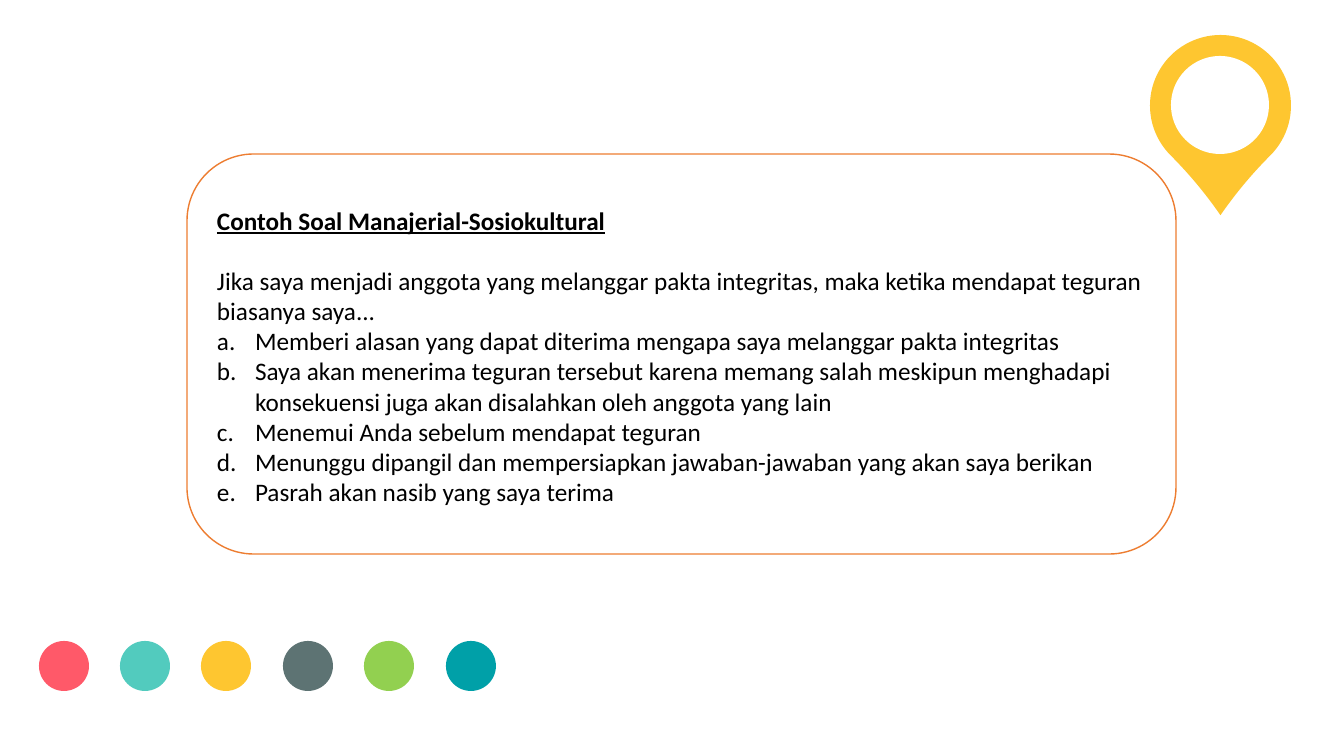
from lxml.etree import SubElement
from pptx import Presentation
from pptx.dml.color import RGBColor
from pptx.enum.shapes import MSO_SHAPE
from pptx.enum.text import MSO_ANCHOR, MSO_AUTO_SIZE, PP_ALIGN
from pptx.oxml.ns import qn
from pptx.util import Pt

PX = 914400 / 100.8
YELLOW = "FEC630"
DOTS = ["FF5969", "52CBBE", YELLOW, "5D7373", "92D050", "00A0A8"]
TITLE = "Contoh Soal Manajerial-Sosiokultural"
PROMPT = ("Jika saya menjadi anggota yang melanggar pakta integritas, "
          "maka ketika mendapat teguran biasanya saya...")
CHOICES = [
    "Memberi alasan yang dapat diterima mengapa saya melanggar pakta integritas",
    "Saya akan menerima teguran tersebut karena memang salah meskipun menghadapi "
    "konsekuensi juga akan disalahkan oleh anggota yang lain",
    "Menemui Anda sebelum mendapat teguran",
    "Menunggu dipangil dan mempersiapkan jawaban-jawaban yang akan saya berikan",
    "Pasrah akan nasib yang saya terima",
]


def px(n):
    return round(n * PX)


def color(code):
    return RGBColor.from_string(code)


def add_form(shapes, kind, x, y, w, h, fill, line=None):
    form = shapes.add_shape(kind, px(x), px(y), px(w), px(h))
    form.shadow.inherit = False
    form.fill.solid()
    form.fill.fore_color.rgb = color(fill)
    if line:
        form.line.color.rgb = color(line)
        form.line.width = Pt(1)
    else:
        form.line.fill.background()
    return form


def place(holder, x, y, w, h):
    """Move a placeholder and strip its margins and autofit."""
    holder.left, holder.top, holder.width, holder.height = map(px, (x, y, w, h))
    frame = holder.text_frame
    frame.margin_left = frame.margin_right = 0
    frame.margin_top = frame.margin_bottom = 0
    frame.word_wrap = True
    frame.auto_size = MSO_AUTO_SIZE.NONE
    frame.vertical_anchor = MSO_ANCHOR.TOP
    return frame


def write(para, text, size=18, bold=False, underline=False, tint="000000"):
    para.alignment = PP_ALIGN.LEFT
    para.space_before = para.space_after = Pt(0)
    run = para.add_run()
    run.text = text
    font = run.font
    font.name, font.size = "Calibri", Pt(size)
    font.bold, font.underline = bold, underline
    font.color.rgb = color(tint)


def mark(para, letter=False):
    """Give a paragraph a letter with hanging indent, or no bullet."""
    props = para._p.get_or_add_pPr()
    hang = px(38) if letter else 0
    props.set("marL", str(hang))
    props.set("indent", str(-hang))
    if letter:
        SubElement(props, qn("a:buFont"), typeface="+mj-lt")
        SubElement(props, qn("a:buAutoNum"), type="alphaLcPeriod")
    else:
        SubElement(props, qn("a:buNone"))


def add_card(slide):
    card = add_form(slide.shapes, MSO_SHAPE.ROUNDED_RECTANGLE,
                    187, 154, 989, 400, "FFFFFF", line="ED7D31")
    slide.shapes._spTree.insert(2, card._element)  # behind the text


def add_text(slide):
    title = place(slide.shapes.title, 217, 205, 930, 30)
    write(title.paragraphs[0], TITLE, bold=True, underline=True)
    body = place(slide.placeholders[1], 217, 265, 930, 242)
    write(body.paragraphs[0], PROMPT)
    mark(body.paragraphs[0])
    for choice in CHOICES:
        para = body.add_paragraph()
        write(para, choice)
        mark(para, letter=True)


def add_pin(slide):
    pin = slide.shapes.add_group_shape().shapes
    drop = add_form(pin, MSO_SHAPE.TEAR, 1150, 35, 141, 141, YELLOW)
    drop.adjustments[0] = 1.1
    drop.rotation = 135
    add_form(pin, MSO_SHAPE.OVAL, 1171, 56, 98, 98, "FFFFFF")


def add_dots(slide):
    row = slide.shapes.add_group_shape().shapes
    span = 407  # from first dot to last
    for i, tint in enumerate(DOTS):
        x = 39 + span * i // (len(DOTS) - 1)
        add_form(row, MSO_SHAPE.OVAL, x, 641, 50, 50, tint)


def main():
    deck = Presentation()
    deck.slide_width, deck.slide_height = px(1344), px(756)
    slide = deck.slides.add_slide(deck.slide_layouts[1])
    add_card(slide)
    add_text(slide)
    add_pin(slide)
    add_dots(slide)
    deck.save("out.pptx")


if __name__ == "__main__":
    main()
